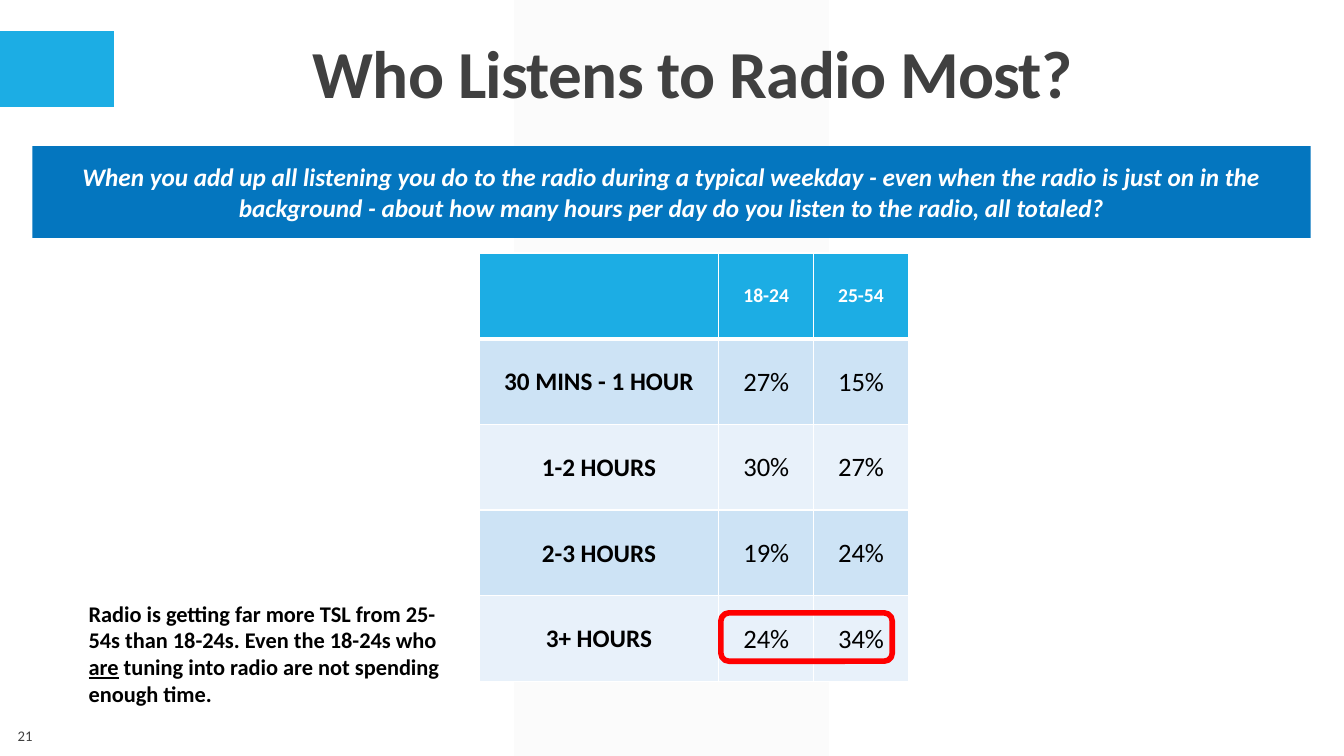
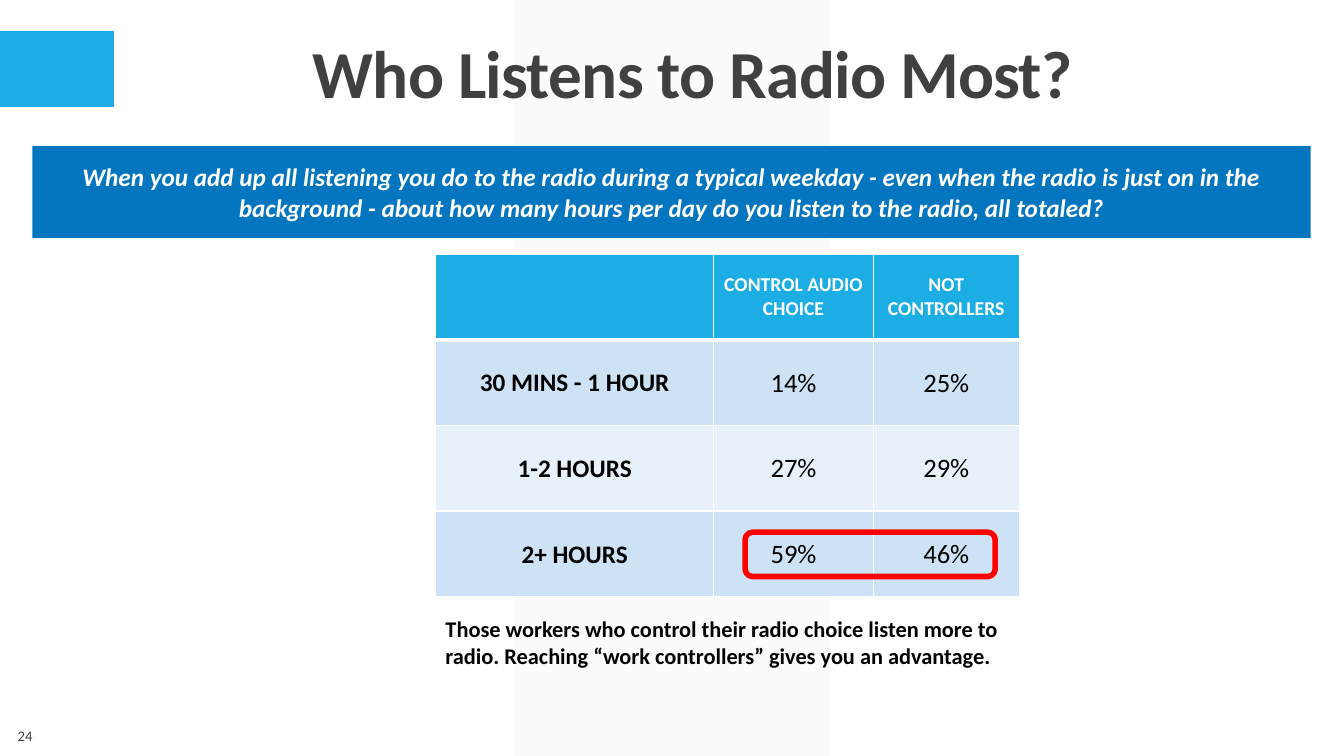
from lxml import etree
from pptx import Presentation
from pptx.dml.color import RGBColor
from pptx.enum.shapes import MSO_SHAPE
from pptx.enum.text import MSO_ANCHOR, MSO_AUTO_SIZE, PP_ALIGN
from pptx.oxml.ns import qn
from pptx.util import Pt

RECTANGLE, ROUNDED = MSO_SHAPE.RECTANGLE, MSO_SHAPE.ROUNDED_RECTANGLE
LEFT, CENTER, RIGHT = PP_ALIGN.LEFT, PP_ALIGN.CENTER, PP_ALIGN.RIGHT
TOP, MIDDLE, BOTTOM = MSO_ANCHOR.TOP, MSO_ANCHOR.MIDDLE, MSO_ANCHOR.BOTTOM
NO_AUTOFIT = MSO_AUTO_SIZE.NONE

FONT = "Calibri"
WHITE, BLACK, GRAY, PALE_GRAY = "FFFFFF", "000000", "404040", "F2F2F2"
SKY, BLUE, RED = "1CADE4", "0476BF", "FF0000"
ROW_FILLS = ["CDE3F5", "E8F1FA"]
EMU_PER_PX = 9144
ROW_HEIGHT = 85

TITLE = "Who Listens to Radio Most?"
QUESTION = (
    "When you add up all listening you do to the radio during a typical weekday - "
    "even when the radio is just on in the background - about how many hours per day "
    "do you listen to the radio, all totaled?"
)
SLIDES = [
    {
        "number": "21",
        "table_at": (475, 251),
        "columns": [238, 94, 94],
        "rows": [
            ("", "18-24", "25-54"),
            ("30 MINS - 1 HOUR", "27%", "15%"),
            ("1-2 HOURS", "30%", "27%"),
            ("2-3 HOURS", "19%", "24%"),
            ("3+ HOURS", "24%", "34%"),
        ],
        "highlight": (715, 608, 170, 48),
        "note_at": (78, 590, 382, 118),
        "note": [
            ("Radio is getting far more TSL from 25-54s than 18-24s. Even the 18-24s who ", {}),
            ("are", {"underline": True}),
            (" tuning into radio are not spending enough time.", {}),
        ],
    },
    {
        "number": "24",
        "table_at": (432, 252),
        "columns": [276, 158, 145],
        "rows": [
            ("", "CONTROL AUDIO CHOICE", "NOT CONTROLLERS"),
            ("30 MINS - 1 HOUR", "14%", "25%"),
            ("1-2 HOURS", "27%", "29%"),
            ("2+ HOURS", "59%", "46%"),
        ],
        "highlight": (739, 528, 248, 44),
        "note_at": (432, 605, 579, 64),
        "note": [
            ("Those workers who control their radio choice listen more to radio. "
             "Reaching “work controllers” gives you an advantage.", {}),
        ],
    },
]


def px(*lengths):
    return [length * EMU_PER_PX for length in lengths]


def color(value):
    return RGBColor.from_string(value)


def write(frame, spans, size, ink, bold=False, italic=False, align=LEFT):
    para = frame.paragraphs[0]
    para.alignment = align
    for text, extra in spans:
        span = para.add_run()
        span.text = text
        font = span.font
        font.name, font.size = FONT, Pt(size)
        font.bold, font.italic = bold, italic
        font.color.rgb = color(ink)
        for name, value in extra.items():
            setattr(font, name, value)
    return para


def add_box(page, kind, at, fill=None, line=None):
    box = page.shapes.add_shape(kind, *px(*at))
    box.shadow.inherit = False
    if fill:
        box.fill.solid()
        box.fill.fore_color.rgb = color(fill)
    else:
        box.fill.background()
    if line:
        box.line.color.rgb = color(line)
        box.line.width = Pt(4)
    else:
        box.line.fill.background()
    return box


def add_text(page, at, spans, size, ink, anchor=TOP, **style):
    box = page.shapes.add_textbox(*px(*at))
    box.text_frame.word_wrap = True
    box.text_frame.vertical_anchor = anchor
    write(box.text_frame, spans, size, ink, **style)


def add_frame(page):
    band = add_box(page, RECTANGLE, (510, 0, 312, 750), PALE_GRAY)
    tint = band.element.spPr.find(".//" + qn("a:srgbClr"))
    etree.SubElement(tint, qn("a:alpha"), val="30000")
    add_box(page, RECTANGLE, (0, 31, 113, 75), SKY)

    banner = add_box(page, RECTANGLE, (32, 145, 1268, 91), BLUE)
    banner.text_frame.word_wrap = True
    banner.text_frame.vertical_anchor = MIDDLE
    write(banner.text_frame, [(QUESTION, {})], 18, WHITE, True, True, CENTER)


def add_title(page):
    title = page.shapes.title
    title.left, title.top, title.width, title.height = px(137, 42, 1100, 75)
    frame = title.text_frame
    frame.word_wrap = True
    frame.auto_size = NO_AUTOFIT
    frame.vertical_anchor = BOTTOM
    para = write(frame, [(TITLE, {})], 48, GRAY, bold=True, align=CENTER)
    para.line_spacing = 0.9
    para.runs[0]._r.get_or_add_rPr().set("spc", "-50")
    title.element.getparent().append(title.element)


def set_borders(cell, widths):
    properties = cell._tc.get_or_add_tcPr()
    for side, width in zip(("lnL", "lnR", "lnT", "lnB"), widths):
        edge = etree.SubElement(properties, qn("a:" + side), w=str(Pt(width)))
        fill = etree.SubElement(edge, qn("a:solidFill"))
        etree.SubElement(fill, qn("a:srgbClr"), val=WHITE)


def add_hours_table(page, at, columns, rows):
    size = (sum(columns), ROW_HEIGHT * len(rows))
    table = page.shapes.add_table(len(rows), len(columns), *px(*at, *size)).table
    for column, width in zip(table.columns, px(*columns)):
        column.width = width
    for r, row in enumerate(rows):
        table.rows[r].height = px(ROW_HEIGHT)[0]
        for c, text in enumerate(row):
            cell = table.cell(r, c)
            cell.vertical_anchor = MIDDLE
            set_borders(cell, (1, 1, 3 if r == 1 else 1, 3 if r == 0 else 1))
            cell.fill.solid()
            if r == 0:
                fill, font_size, ink = SKY, 14, WHITE
            else:
                fill, font_size, ink = ROW_FILLS[(r - 1) % 2], 19 if c else 18, BLACK
                cell.margin_left, cell.margin_right, cell.margin_top, cell.margin_bottom = px(1, 1, 1, 0)
            cell.fill.fore_color.rgb = color(fill)
            if text:
                write(cell.text_frame, [(text, {})], font_size, ink,
                      bold=r == 0 or c == 0, align=CENTER)


def main():
    deck = Presentation()
    deck.slide_width, deck.slide_height = px(1333, 750)
    title_only = deck.slide_layouts[5]
    for content in SLIDES:
        page = deck.slides.add_slide(title_only)
        add_frame(page)
        add_hours_table(page, content["table_at"], content["columns"], content["rows"])
        add_title(page)
        add_box(page, ROUNDED, content["highlight"], line=RED)
        add_text(page, content["note_at"], content["note"], 16, BLACK, bold=True)
        add_text(page, (0, 710, 42, 40), [(content["number"], {})], 10.5, GRAY,
                 anchor=MIDDLE, align=RIGHT)
    deck.save("out.pptx")


if __name__ == "__main__":
    main()
